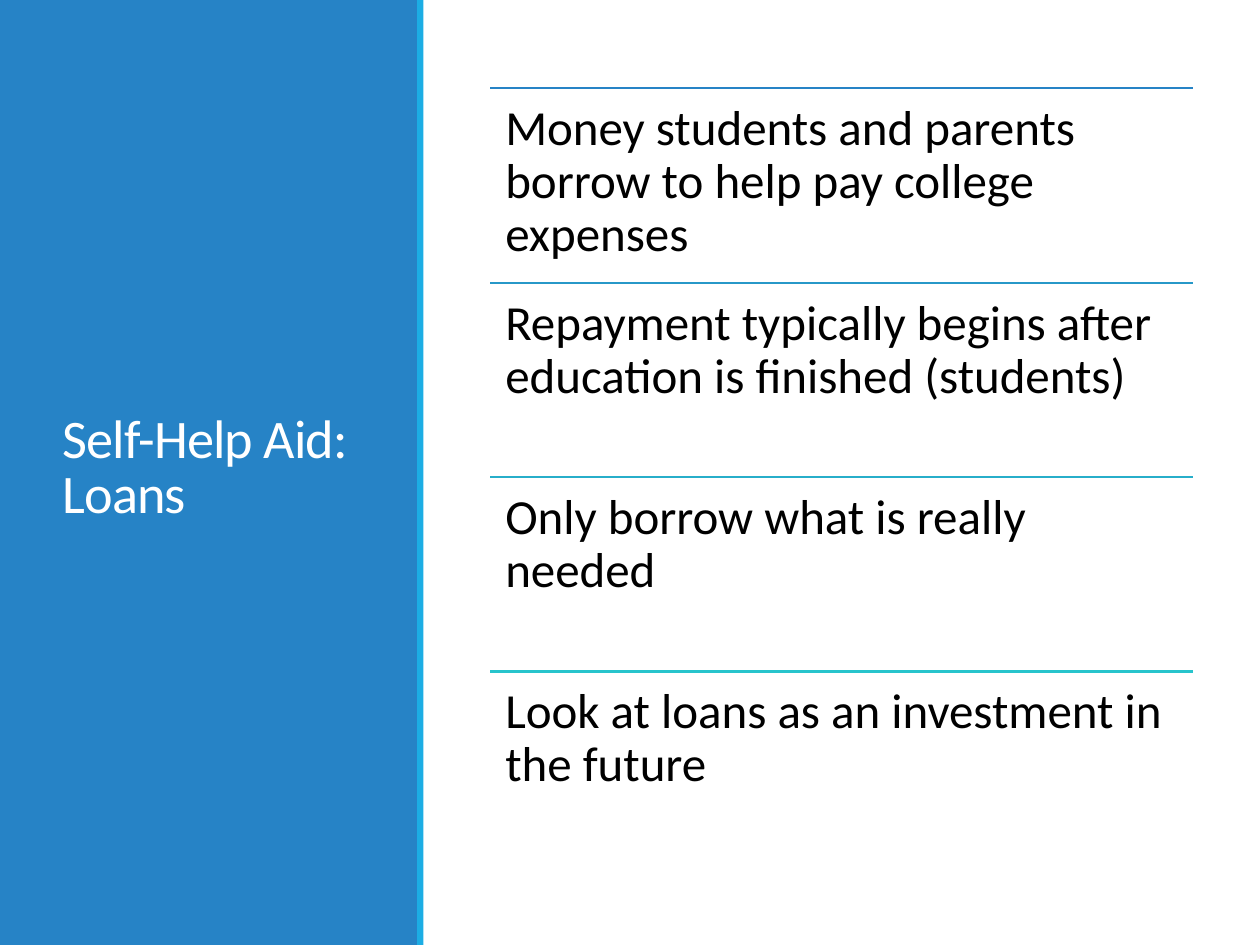
from lxml import etree
from pptx import Presentation
from pptx.dml.color import RGBColor
from pptx.enum import shapes, text
from pptx.oxml.ns import qn
from pptx.util import Inches, Pt

TITLE = "Self-Help Aid: Loans"
POINTS = [
    ("Money students and parents borrow to help pay college expenses", "rule1"),
    ("Repayment typically begins after education is finished (students)", "rule2"),
    ("Only borrow what is really needed", "rule3"),
    ("Look at loans as an investment in the future", "rule4"),
]
COLORS = {
    "panel": "2683C6", "stripe": "1CADE4", "white": "FFFFFF", "ink": "000000",
    "rule1": "2683C6", "rule2": "2798C8", "rule3": "27AECA", "rule4": "28C4CC",
}
LIST_LEFT, LIST_TOP, LIST_WIDTH, ROW_HEIGHT = 3.89, 0.7, 5.575, 1.543


def color(name):
    return RGBColor.from_string(COLORS[name])


def add_bar(page, left, width, fill):
    bar = page.shapes.add_shape(shapes.MSO_SHAPE.RECTANGLE, Inches(left), 0,
                                Inches(width), Inches(7.5))
    bar.shadow.inherit = False
    bar.fill.solid()
    bar.fill.fore_color.rgb = color(fill)
    bar.line.fill.background()


def add_text(page, wording, place, size, ink, spacing, anchor, insets):
    box = page.shapes.add_textbox(*map(Inches, place))
    frame = box.text_frame
    frame.word_wrap = True
    frame.vertical_anchor = anchor
    frame.margin_left = frame.margin_right = Inches(insets[0])
    frame.margin_top = frame.margin_bottom = Inches(insets[1])
    para = frame.paragraphs[0]
    para.text = wording
    para.line_spacing = spacing
    para.font.name = "Calibri"
    para.font.size = Pt(size)
    para.font.color.rgb = color(ink)
    return para


def add_rule(page, top, ink):
    rule = page.shapes.add_connector(
        shapes.MSO_CONNECTOR.STRAIGHT, Inches(LIST_LEFT), Inches(top),
        Inches(LIST_LEFT + LIST_WIDTH), Inches(top))
    rule.line.color.rgb = color(ink)
    rule.line.width = Pt(1.25)
    etree.SubElement(rule.element.spPr, qn("a:effectLst"))


deck = Presentation()
deck.slide_width, deck.slide_height = Inches(10), Inches(7.5)
page = deck.slides.add_slide(deck.slide_layouts[6])

# Side panel with title
add_bar(page, 0, 3.32, "panel")
title = add_text(page, TITLE, (0.4, 0.57, 2.53, 6.31), 31, "white", 0.85,
                 text.MSO_ANCHOR.MIDDLE, (0.1, 0.05))
title.runs[0].font._element.set("spc", "-50")  # tighter letters
add_bar(page, 3.31, 0.05, "stripe")

# Ruled list
for row, (wording, ink) in enumerate(POINTS):
    top = LIST_TOP + row * ROW_HEIGHT
    add_rule(page, top, ink)
    add_text(page, wording, (LIST_LEFT, top, LIST_WIDTH, ROW_HEIGHT), 28, "ink",
             0.9, text.MSO_ANCHOR.TOP, (0.12, 0.12))

deck.save("out.pptx")
